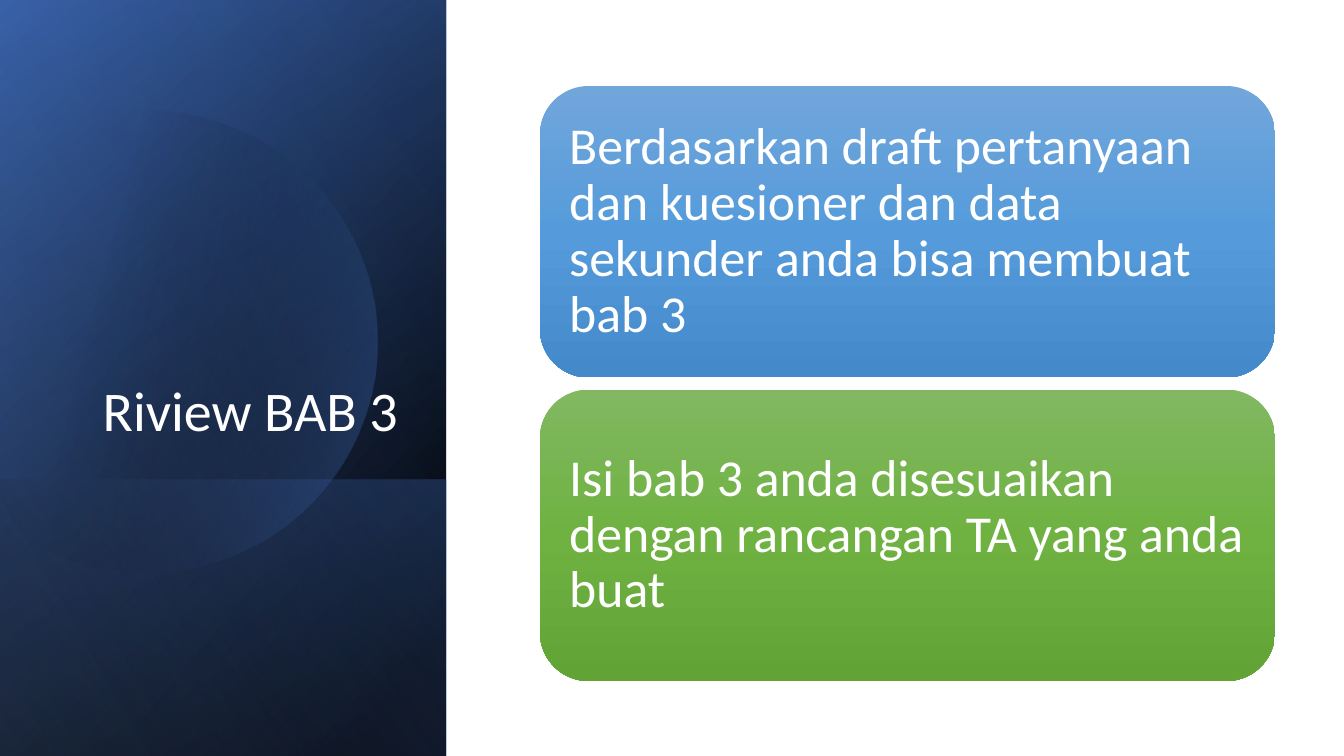
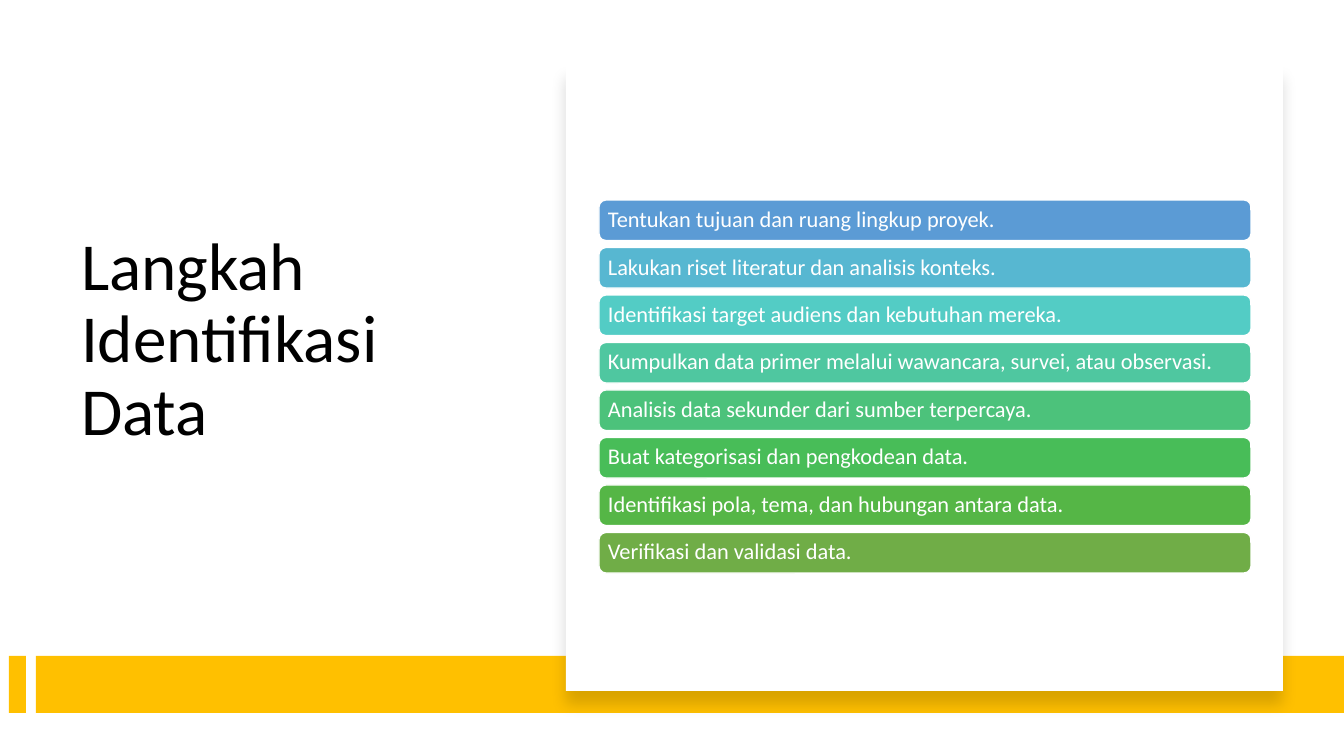
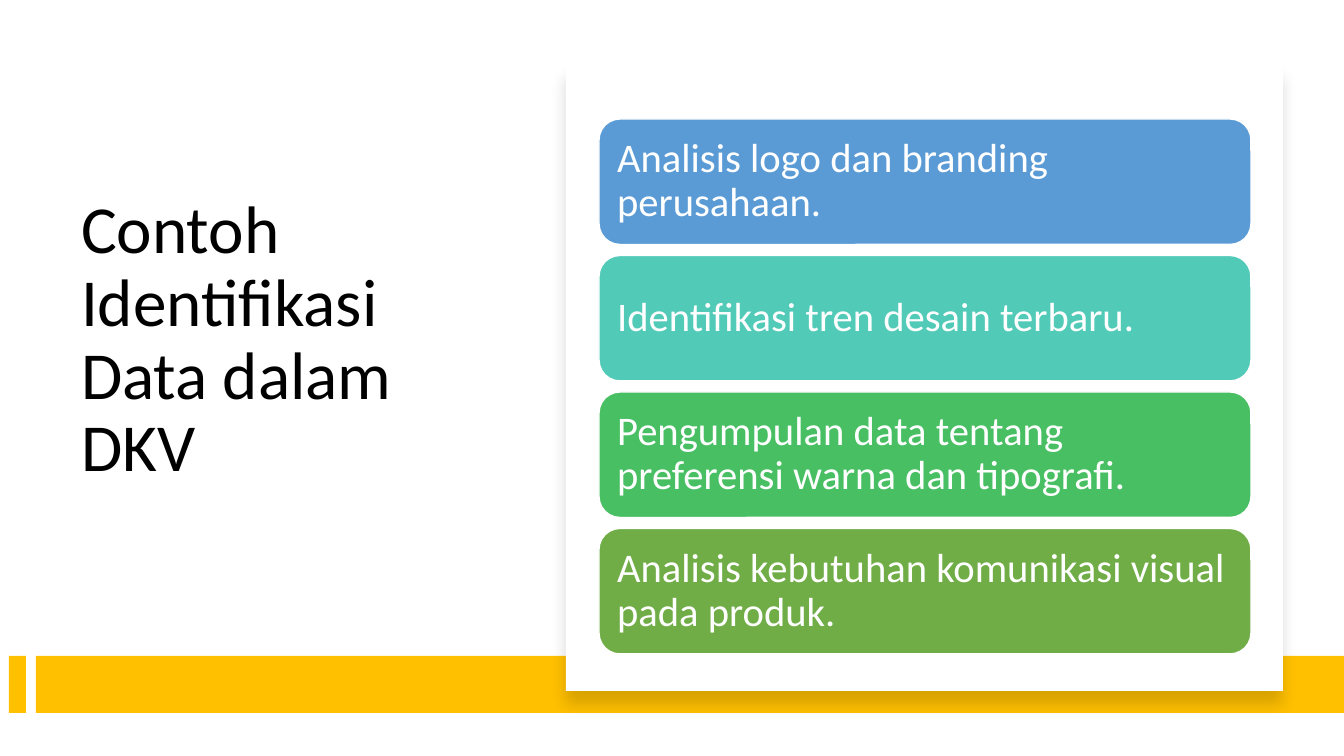
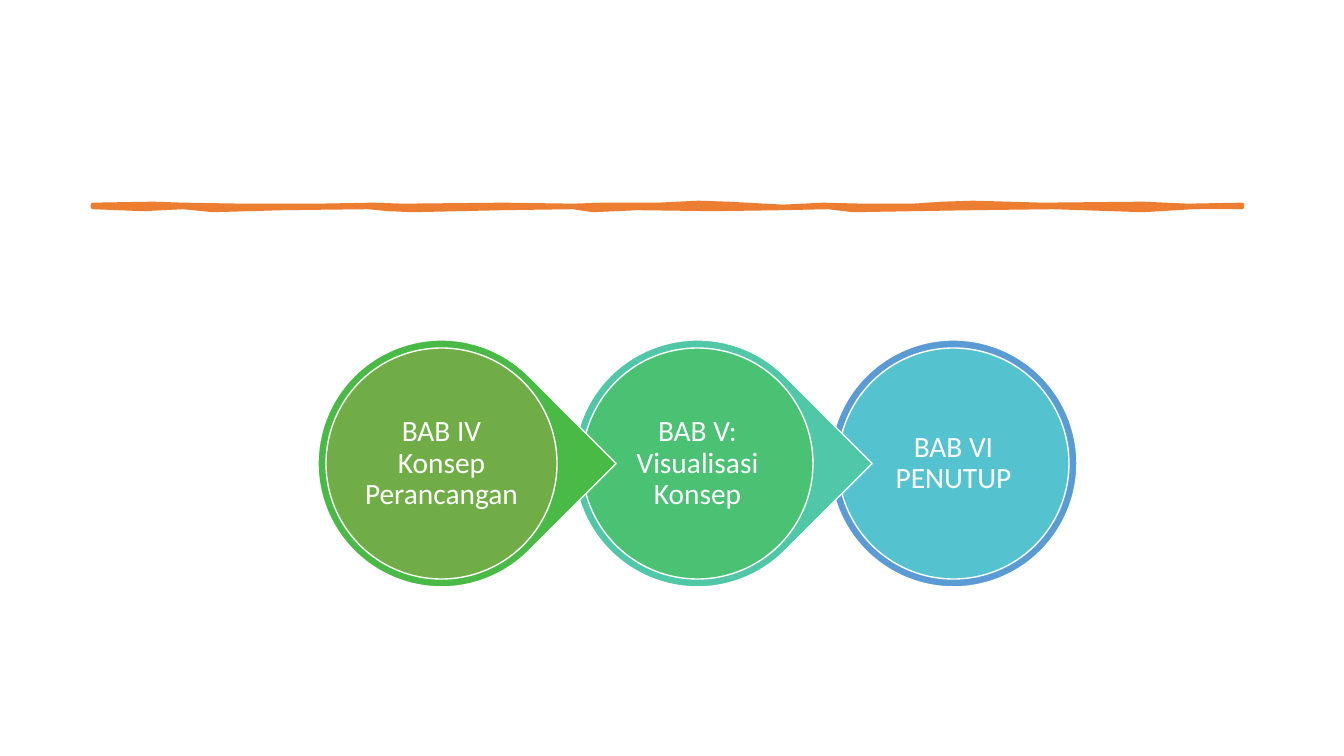
from math import acos, cos, sin

from pptx import Presentation
from pptx.dml.color import RGBColor
from pptx.enum.shapes import MSO_SHAPE
from pptx.enum.text import MSO_ANCHOR, MSO_AUTO_SIZE, PP_ALIGN
from pptx.oxml import parse_xml
from pptx.oxml.ns import nsdecls, qn
from pptx.util import Pt

PX = 914400 / 100.8
SLIDE_SIZE = (1344, 756)
FONT = "Calibri"
WHITE, BLACK = "FFFFFF", "000000"
AMBER, ORANGE = "FFC000", "ED7D31"
NAVY, BLUE, PALE_BLUE = "2F5597", "4472C4", "8FAADC"
SKY, LEAF = "5B9BD5", "70AD47"
TITLE_ONLY, BLANK = 5, 6


def px(length):
    return round(length * PX)


def rgb(color):
    return RGBColor.from_string(color)


def apply(target, values):
    for name, value in values.items():
        setattr(target, name, value)


def place(shape, box):
    apply(shape, dict(zip(("left", "top", "width", "height"), map(px, box))))


def gradient(shape, stops, angle):
    shape.fill.background()
    stop_xml = "".join(
        f'<a:gs pos="{pos * 1000}"><a:srgbClr val="{color}">'
        f'<a:alpha val="{alpha * 1000}"/></a:srgbClr></a:gs>'
        for pos, color, alpha in stops
    )
    properties = shape._element.spPr
    properties.replace(properties.find(qn("a:noFill")), parse_xml(
        f'<a:gradFill {nsdecls("a")} rotWithShape="1"><a:gsLst>{stop_xml}</a:gsLst>'
        f'<a:lin ang="{angle * 60000}" scaled="0"/></a:gradFill>'
    ))


def paint(shape, fill=None, line=None, weight=1):
    shape.shadow.inherit = False
    if fill:
        shape.fill.solid()
        shape.fill.fore_color.rgb = rgb(fill)
    if line:
        shape.line.color.rgb = rgb(line)
        shape.line.width = Pt(weight)
    else:
        shape.line.fill.background()


def add_part(slide, preset, box, fill=None, line=None):
    part = slide.shapes.add_shape(preset, *map(px, box))
    paint(part, fill, line)
    return part


def write(shape, text, size, color=WHITE, align=PP_ALIGN.LEFT, anchor=MSO_ANCHOR.MIDDLE, inset=None):
    frame = shape.text_frame
    apply(frame, {"word_wrap": True, "auto_size": MSO_AUTO_SIZE.NONE, "vertical_anchor": anchor})
    if inset is not None:
        sides = ("margin_left", "margin_top", "margin_right", "margin_bottom")
        apply(frame, dict.fromkeys(sides, px(inset)))
    frame.text = text
    paragraph = frame.paragraphs[0]
    apply(paragraph, {"alignment": align, "line_spacing": 0.9})
    font = paragraph.runs[0].font
    apply(font, {"name": FONT, "size": Pt(size)})
    font.color.rgb = rgb(color)


def add_title(slide, box, text, size, **style):
    place(slide.shapes.title, box)
    write(slide.shapes.title, text, size, **style)


def add_outline(slide, points):
    corners = [(px(x), px(y)) for x, y in points]
    builder = slide.shapes.build_freeform(*corners[0], scale=1.0)
    builder.add_line_segments(corners[1:], close=True)
    return builder.convert_to_shape()


def gradient_layer(slide, box, stops, angle):
    left, top, width, height = box
    turned = (left + (width - height) / 2, top + (height - width) / 2, height, width)
    layer = add_part(slide, MSO_SHAPE.RECTANGLE, turned)
    layer.rotation = 90
    layer._element.spPr.xfrm.set("flipH", "1")
    gradient(layer, stops, angle)


def clipped_disc(slide, box):
    left, top, width, _ = box
    center_x, center_y, radius = left + 146, top + 342, 231
    limit = acos((left - center_x) / radius)
    steps = 120
    angles = [limit * (2 * step / steps - 1) for step in range(steps + 1)]
    disc = add_outline(slide, [
        (center_x + radius * cos(angle), center_y + radius * sin(angle)) for angle in angles
    ])
    paint(disc)
    gradient(disc, [(29, BLACK, 0), (100, BLUE, 43)], 14)


def night_panel(slide, box):
    left, top, width, height = box
    floor = 276
    gradient_layer(slide, box, [(8, BLACK, 100), (100, NAVY, 100)], 50)
    gradient_layer(slide, box, [(0, BLACK, 0), (99, BLUE, 46)], 30)
    gradient_layer(slide, (left, top + height - floor, width, floor),
                   [(2, BLUE, 29), (100, BLACK, 30)], 130)
    clipped_disc(slide, box)
    gradient_layer(slide, box, [(0, BLACK, 0), (99, PALE_BLUE, 11)], 120)


def card_stack(slide, box, cards, gap, size, inset, line=None):
    left, top, width, height = box
    card_height = (height - gap * (len(cards) - 1)) / len(cards)
    for row, (text, fill) in enumerate(cards):
        card_box = (left, top + row * (card_height + gap), width, card_height)
        card = add_part(slide, MSO_SHAPE.ROUNDED_RECTANGLE, card_box, line=line)
        if isinstance(fill, str):
            paint(card, fill, line)
        else:
            gradient(card, [(pos, color, 100) for pos, color in zip((0, 50, 100), fill)], 90)
        write(card, text, size, inset=inset)


def amber_band(slide, box):
    left, top, width, height = box
    tab, gap = 17, 10
    add_part(slide, MSO_SHAPE.RECTANGLE, (left, top, tab, height), AMBER)
    start = tab + gap
    add_part(slide, MSO_SHAPE.RECTANGLE, (left + start, top, width - start, height), AMBER)


def white_sheet(slide, box):
    sheet = add_part(slide, MSO_SHAPE.RECTANGLE, box, WHITE)
    effects = sheet._element.spPr.find(qn("a:effectLst"))
    effects.append(parse_xml(
        f'<a:outerShdw {nsdecls("a")} blurRad="{Pt(11)}" dist="{Pt(10)}" dir="5400000" '
        f'algn="t" rotWithShape="0"><a:srgbClr val="{BLACK}"><a:alpha val="15000"/>'
        '</a:srgbClr></a:outerShdw>'
    ))


def review_slide(deck, title, cards):
    slide = deck.slides.add_slide(deck.slide_layouts[TITLE_ONLY])
    night_panel(slide, (0, 0, 446, 756))
    add_title(slide, (64, 185, 344, 264), title, 40,
              align=PP_ALIGN.RIGHT, anchor=MSO_ANCHOR.BOTTOM)
    heading = slide.shapes.title._element
    heading.getparent().append(heading)
    card_stack(slide, (540, 86, 735, 595), cards, gap=12, size=37, inset=15)


def list_slide(deck, title, cards, stack_top, stack_height, **stack_style):
    slide = deck.slides.add_slide(deck.slide_layouts[TITLE_ONLY])
    add_title(slide, (71, 84, 418, 514), title, 48, color=BLACK)
    amber_band(slide, (9, 656, 1335, 57))
    white_sheet(slide, (566, 65, 717, 626))
    card_stack(slide, (599, stack_top, 652, stack_height), cards, line=WHITE, **stack_style)


def brush_stroke(slide, box):
    left, top, width, height = box
    upper = [(0, 3), (60, 2), (90, 3), (150, 4), (225, 4), (280, 3), (310, 4), (410, 3),
             (480, 4), (510, 3), (565, 3), (605, 1), (635, 2), (690, 5), (730, 3), (770, 4),
             (820, 4), (850, 2), (880, 1), (950, 3), (1050, 2), (1095, 4), (width, 3)]
    lower = [(width, 5), (1100, 5), (1050, 8), (960, 5), (880, 6), (760, 8), (735, 5),
             (690, 6), (620, 7), (545, 6), (500, 8), (480, 5), (410, 6), (320, 8), (295, 7),
             (275, 5), (190, 6), (120, 8), (90, 5), (50, 7), (0, 5)]
    stroke = add_outline(slide, [(left + x, top + y) for x, y in upper + lower])
    paint(stroke, ORANGE, ORANGE, 3.25)


def chapter_chain(slide, box, chapters):
    left, top, pitch, ring = box
    rim = 8
    for column, (text, ring_color, disc_color) in reversed(list(enumerate(chapters))):
        is_last = column == len(chapters) - 1
        ring_left = left + column * pitch
        preset = MSO_SHAPE.OVAL if is_last else MSO_SHAPE.TEAR
        link = add_part(slide, preset, (ring_left, top, ring, ring), ring_color, WHITE)
        link.rotation = 0 if is_last else 45
        core = ring - 2 * rim
        disc = add_part(slide, MSO_SHAPE.OVAL, (ring_left + rim, top + rim, core, core),
                        disc_color, WHITE)
        write(disc, text, 21, align=PP_ALIGN.CENTER, inset=3)


def chapter_slide(deck, chapters):
    slide = deck.slides.add_slide(deck.slide_layouts[BLANK])
    brush_stroke(slide, (93, 202, 1149, 10))
    chapter_chain(slide, (318, 340, 256, 247), chapters)


def main():
    deck = Presentation()
    apply(deck, dict(zip(("slide_width", "slide_height"), map(px, SLIDE_SIZE))))
    review_slide(deck, "Riview BAB 3", [
        ("Berdasarkan draft pertanyaan dan kuesioner dan data sekunder anda bisa membuat bab 3",
         ("71A6DB", "559BDB", "448ACA")),
        ("Isi bab 3 anda disesuaikan dengan rancangan TA yang anda buat",
         ("81B861", "6FB242", "62A336")),
    ])
    list_slide(deck, "Langkah Identifikasi Data", [
        ("Tentukan tujuan dan ruang lingkup proyek.", SKY),
        ("Lakukan riset literatur dan analisis konteks.", "57B7D1"),
        ("Identifikasi target audiens dan kebutuhan mereka.", "53CCC5"),
        ("Kumpulkan data primer melalui wawancara, survei, atau observasi.", "4FC7A0"),
        ("Analisis data sekunder dari sumber terpercaya.", "4CC27B"),
        ("Buat kategorisasi dan pengkodean data.", "48BD58"),
        ("Identifikasi pola, tema, dan hubungan antara data.", "55B646"),
        ("Verifikasi dan validasi data.", LEAF),
    ], stack_top=200, stack_height=373, gap=7, size=16, inset=7)
    list_slide(deck, "Contoh Identifikasi Data dalam DKV", [
        ("Analisis logo dan branding perusahaan.", SKY),
        ("Identifikasi tren desain terbaru.", "52CAB8"),
        ("Pengumpulan data tentang preferensi warna dan tipografi.", "49BF64"),
        ("Analisis kebutuhan komunikasi visual pada produk.", LEAF),
    ], stack_top=119, stack_height=535, gap=11, size=29, inset=12)
    chapter_slide(deck, [
        ("BAB IV Konsep Perancangan", "4ABA46", LEAF),
        ("BAB V: Visualisasi Konsep", "50C8A7", "4BC174"),
        ("BAB VI PENUTUP", SKY, "55C3CF"),
    ])
    deck.save("out.pptx")


if __name__ == "__main__":
    main()
